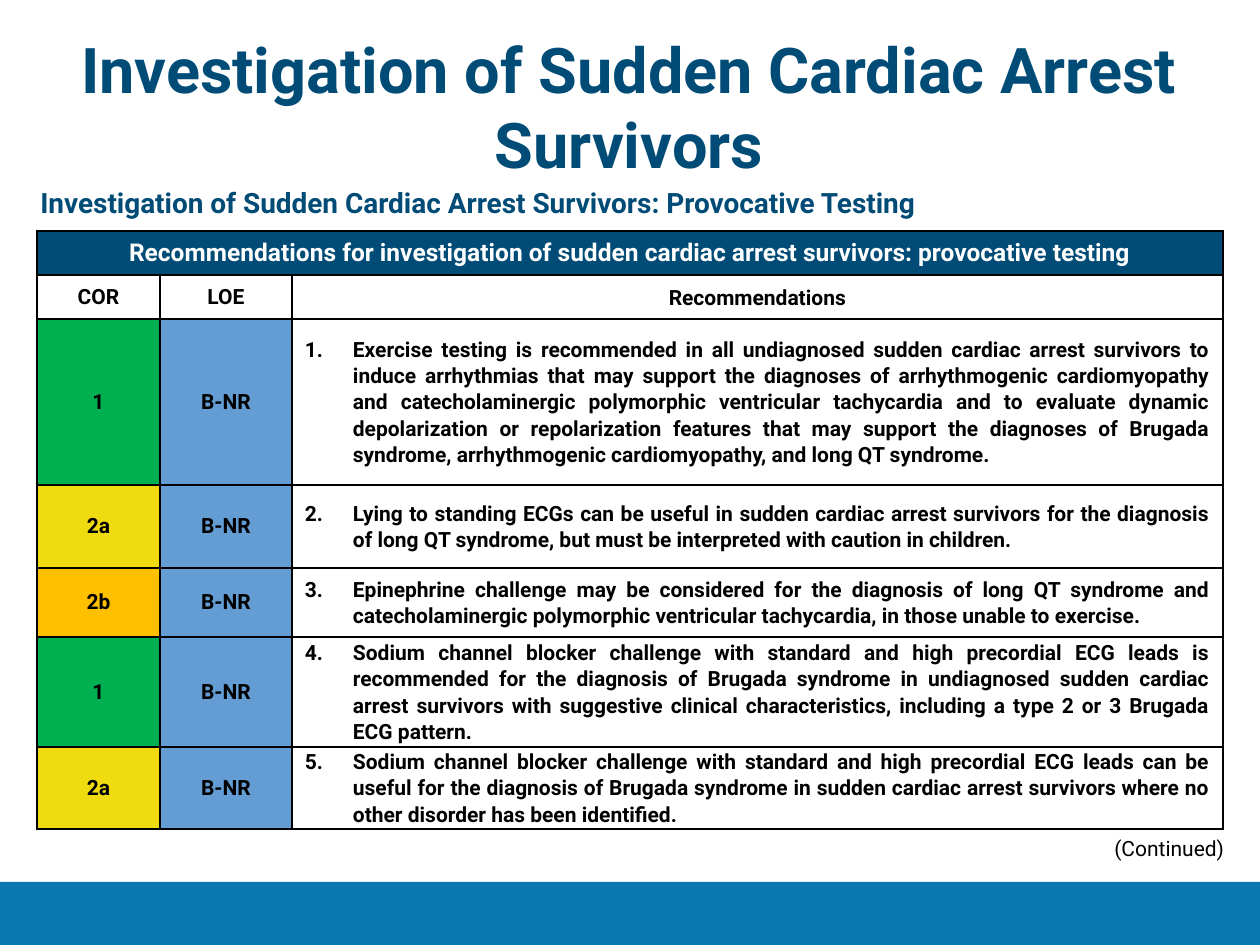
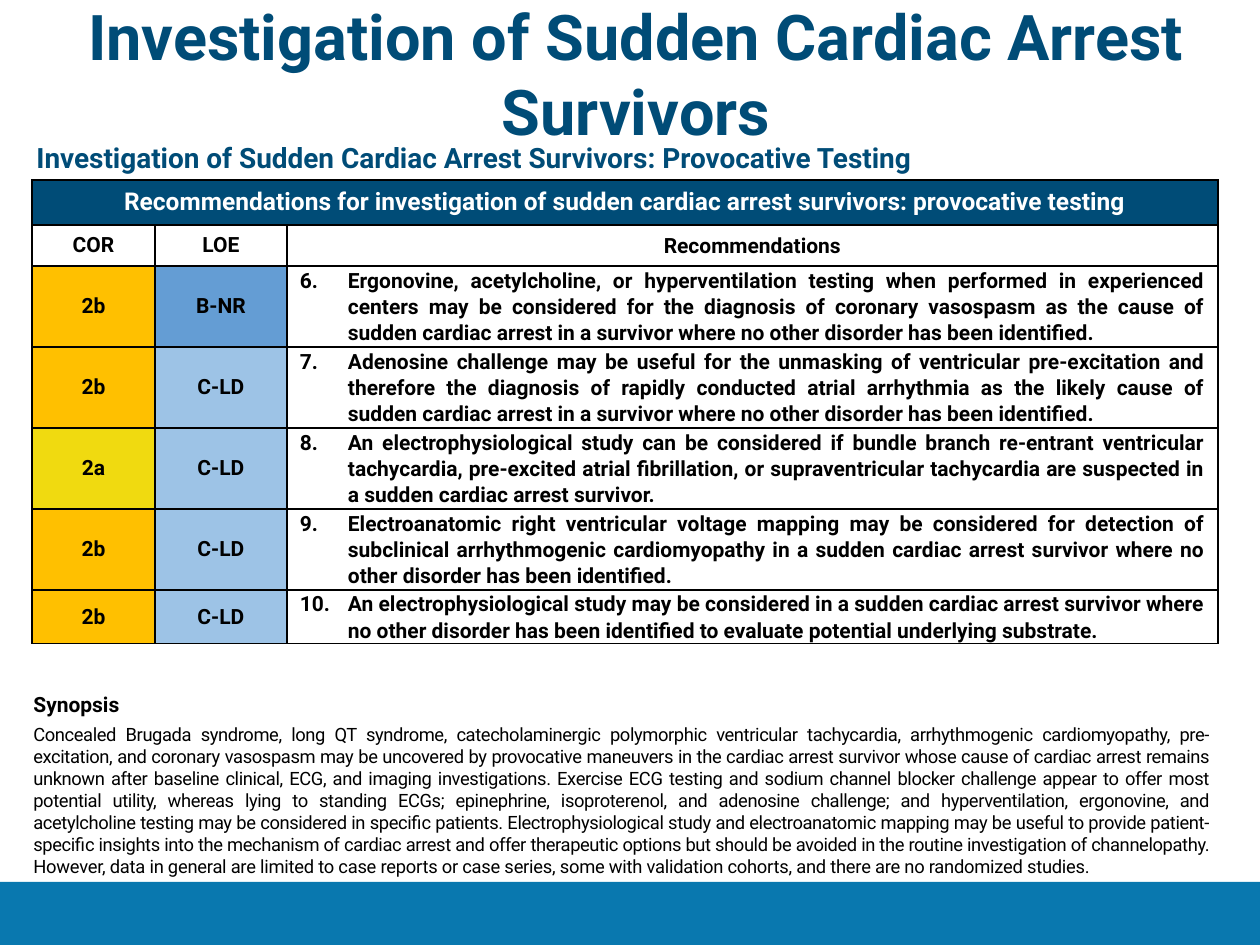
"""Build two slides of recommendations on provocative testing after sudden cardiac arrest."""
import lxml.etree
import pptx
import pptx.dml.color
import pptx.enum.shapes
import pptx.enum.text
import pptx.oxml
import pptx.oxml.ns
import pptx.util

ALIGN = pptx.enum.text.PP_ALIGN
MIDDLE = pptx.enum.text.MSO_ANCHOR.MIDDLE
QN = pptx.oxml.ns.qn
PX = 914400 / 126
NAVY, BLUE, BLACK, WHITE = "004C77", "0978AF", "000000", "FFFFFF"
COR = {"1": "00B050", "2a": "F0DA10", "2b": "FFC000"}
LOE = {"B-NR": "649DD4", "C-LD": "9DC3E6"}
TITLE = "Investigation of Sudden Cardiac Arrest Survivors"
SUB = TITLE + ": Provocative Testing"
HEAD = "Recommendations for investigation of sudden cardiac arrest survivors: provocative testing"
COLS = [123, 132, 931]

PAGES = [
    {"title": (28, 24, 1202, 165), "sub": (28, 179), "table": (37, 231),
     "rows": [44, 44, 166, 83, 69, 110, 82], "start": 1, "recs": [
        ("1", "B-NR", "Exercise testing is recommended in all undiagnosed sudden cardiac arrest "
         "survivors to induce arrhythmias that may support the diagnoses of arrhythmogenic "
         "cardiomyopathy and catecholaminergic polymorphic ventricular tachycardia and to evaluate "
         "dynamic depolarization or repolarization features that may support the diagnoses of "
         "Brugada syndrome, arrhythmogenic cardiomyopathy, and long QT syndrome."),
        ("2a", "B-NR", "Lying to standing ECGs can be useful in sudden cardiac arrest survivors for "
         "the diagnosis of long QT syndrome, but must be interpreted with caution in children."),
        ("2b", "B-NR", "Epinephrine challenge may be considered for the diagnosis of long QT "
         "syndrome and catecholaminergic polymorphic ventricular tachycardia, in those unable to "
         "exercise."),
        ("1", "B-NR", "Sodium channel blocker challenge with standard and high precordial ECG leads "
         "is recommended for the diagnosis of Brugada syndrome in undiagnosed sudden cardiac arrest "
         "survivors with suggestive clinical characteristics, including a type 2 or 3 Brugada ECG "
         "pattern."),
        ("2a", "B-NR", "Sodium channel blocker challenge with standard and high precordial ECG leads "
         "can be useful for the diagnosis of Brugada syndrome in sudden cardiac arrest survivors "
         "where no other disorder has been identified."),
     ]},
    {"title": (35, -9, 1202, 151), "sub": (24, 134), "table": (32, 180),
     "rows": [45, 41, 81, 81, 81, 81, 53], "start": 6, "recs": [
        ("2b", "B-NR", "Ergonovine, acetylcholine, or hyperventilation testing when performed in "
         "experienced centers may be considered for the diagnosis of coronary vasospasm as the "
         "cause of sudden cardiac arrest in a survivor where no other disorder has been identified."),
        ("2b", "C-LD", "Adenosine challenge may be useful for the unmasking of ventricular "
         "pre-excitation and therefore the diagnosis of rapidly conducted atrial arrhythmia as the "
         "likely cause of sudden cardiac arrest in a survivor where no other disorder has been "
         "identified."),
        ("2a", "C-LD", "An electrophysiological study can be considered if bundle branch re-entrant "
         "ventricular tachycardia, pre-excited atrial fibrillation, or supraventricular tachycardia "
         "are suspected in a sudden cardiac arrest survivor."),
        ("2b", "C-LD", "Electroanatomic right ventricular voltage mapping may be considered for "
         "detection of subclinical arrhythmogenic cardiomyopathy in a sudden cardiac arrest "
         "survivor where no other disorder has been identified."),
        ("2b", "C-LD", "An electrophysiological study may be considered in a sudden cardiac arrest "
         "survivor where no other disorder has been identified to evaluate potential underlying "
         "substrate."),
     ]},
]
BODY = [
    "Concealed Brugada syndrome, long QT syndrome, catecholaminergic polymorphic ventricular "
    "tachycardia, arrhythmogenic cardiomyopathy, pre-excitation, and coronary vasospasm may be "
    "uncovered by provocative maneuvers in the cardiac arrest survivor whose cause of cardiac arrest "
    "remains unknown after baseline clinical, ECG, and imaging investigations. ",
    "Exercise ECG testing and sodium channel blocker challenge appear to offer most potential "
    "utility, whereas lying to standing ECGs; epinephrine, isoproterenol, and adenosine challenge; "
    "and hyperventilation, ergonovine, and acetylcholine testing may be considered in specific "
    "patients. ",
    "Electrophysiological study and electroanatomic mapping may be useful to provide "
    "patient-specific insights into the mechanism of cardiac arrest and offer therapeutic options "
    "but should be avoided in the routine investigation of channelopathy. ",
]
LAST = ("However, data in general are limited to case reports or case series, some with validation "
        "cohorts, and there are no randomized studies.")


def rgb(code):
    return pptx.dml.color.RGBColor.from_string(code)


def write(para, text, size, color=BLACK, bold=True, align=ALIGN.LEFT):
    para.alignment = align
    run = para.add_run()
    run.text = text
    font = run.font
    font.name, font.size, font.bold = "Roboto", pptx.util.Pt(size), bold
    font.color.rgb = rgb(color)
    return run


deck = pptx.Presentation()
deck.slide_width, deck.slide_height = round(1260 * PX), round(945 * PX)

for page in PAGES:
    slide = deck.slides.add_slide(deck.slide_layouts[6])
    band = slide.shapes.add_shape(pptx.enum.shapes.MSO_SHAPE.RECTANGLE,
                                  *[round(n * PX) for n in (0, 882, 1260, 63)])
    band.shadow.inherit = False
    band.fill.solid()
    band.fill.fore_color.rgb = rgb(BLUE)
    band.line.fill.background()

    place = (*page["table"], sum(COLS), sum(page["rows"]))
    grid = slide.shapes.add_table(len(page["rows"]), len(COLS),
                                  *[round(n * PX) for n in place]).table
    grid.first_row = grid.horz_banding = False
    for col, width in zip(grid.columns, COLS):
        col.width = round(width * PX)
    for row, height in zip(grid.rows, page["rows"]):
        row.height = round(height * PX)
    grid.cell(0, 0).merge(grid.cell(0, 2))

    lines = [(HEAD, "", ""), ("COR", "LOE", "Recommendations"), *page["recs"]]
    for r, line in enumerate(lines):
        for c, text in enumerate(line):
            cell = grid.cell(r, c)
            fill = NAVY if r == 0 else (COR, LOE, {})[c].get(text)
            if fill:
                cell.fill.solid()
                cell.fill.fore_color.rgb = rgb(fill)
            else:
                cell.fill.background()
            side = 14 if r == 0 else 13
            cell.margin_left = cell.margin_right = round(side * PX)
            cell.margin_top = cell.margin_bottom = round(6 * PX) if r == 0 else 0
            if r > 0:
                cell.vertical_anchor = MIDDLE
            props = cell._tc.get_or_add_tcPr()
            for n, edge in enumerate(("a:lnL", "a:lnR", "a:lnT", "a:lnB")):
                rule = lxml.etree.Element(QN(edge), w="12700")
                paint = lxml.etree.SubElement(rule, QN("a:solidFill"))
                lxml.etree.SubElement(paint, QN("a:srgbClr"), val=BLACK)
                props.insert(n, rule)
            if not text:
                continue
            para = cell.text_frame.paragraphs[0]
            if r > 1 and c == 2:
                form = para._p.get_or_add_pPr()
                form.set("marL", str(round(48 * PX)))
                form.set("indent", str(round(-48 * PX)))
                lxml.etree.SubElement(form, QN("a:buFont"), typeface="+mj-lt")
                lxml.etree.SubElement(form, QN("a:buAutoNum"), type="arabicPeriod",
                                      startAt=str(page["start"] + r - 2))
            if r == 0 or c == 2:
                para.line_spacing = 1.07
            if r == 0 or (r == 1 and c == 2):
                para.space_after = pptx.util.Pt(8)
            write(para, text, 14 if r == 0 else 12, WHITE if r == 0 else BLACK,
                  align=ALIGN.JUSTIFY if r > 1 and c == 2 else ALIGN.CENTER)

    texts = [(page["title"], TITLE, 36, NAVY, True, ALIGN.CENTER),
             ((*page["sub"], 1187, 47), SUB, 16, NAVY, True, ALIGN.LEFT)]
    if page is PAGES[0]:
        texts.append(((1102, 829, 140, 38), "(Continued)", 12, BLACK, False, ALIGN.LEFT))
    else:
        texts.append(((21, 685, 1202, 202), "Synopsis", 12, BLACK, True, ALIGN.JUSTIFY))
    for place, *look in texts:
        box = slide.shapes.add_textbox(*[round(n * PX) for n in place])
        box.text_frame.word_wrap = True
        write(box.text_frame.paragraphs[0], *look)

box.text_frame.paragraphs[0].space_after = pptx.util.Pt(4)
para = box.text_frame.add_paragraph()
para.space_after = pptx.util.Pt(6)
for text in (*BODY, LAST):
    run = write(para, text, 10.5, bold=False, align=ALIGN.JUSTIFY)
    run._r.get_or_add_rPr().set("spc", "-10" if text == LAST else "-20")

deck.save("out.pptx")
